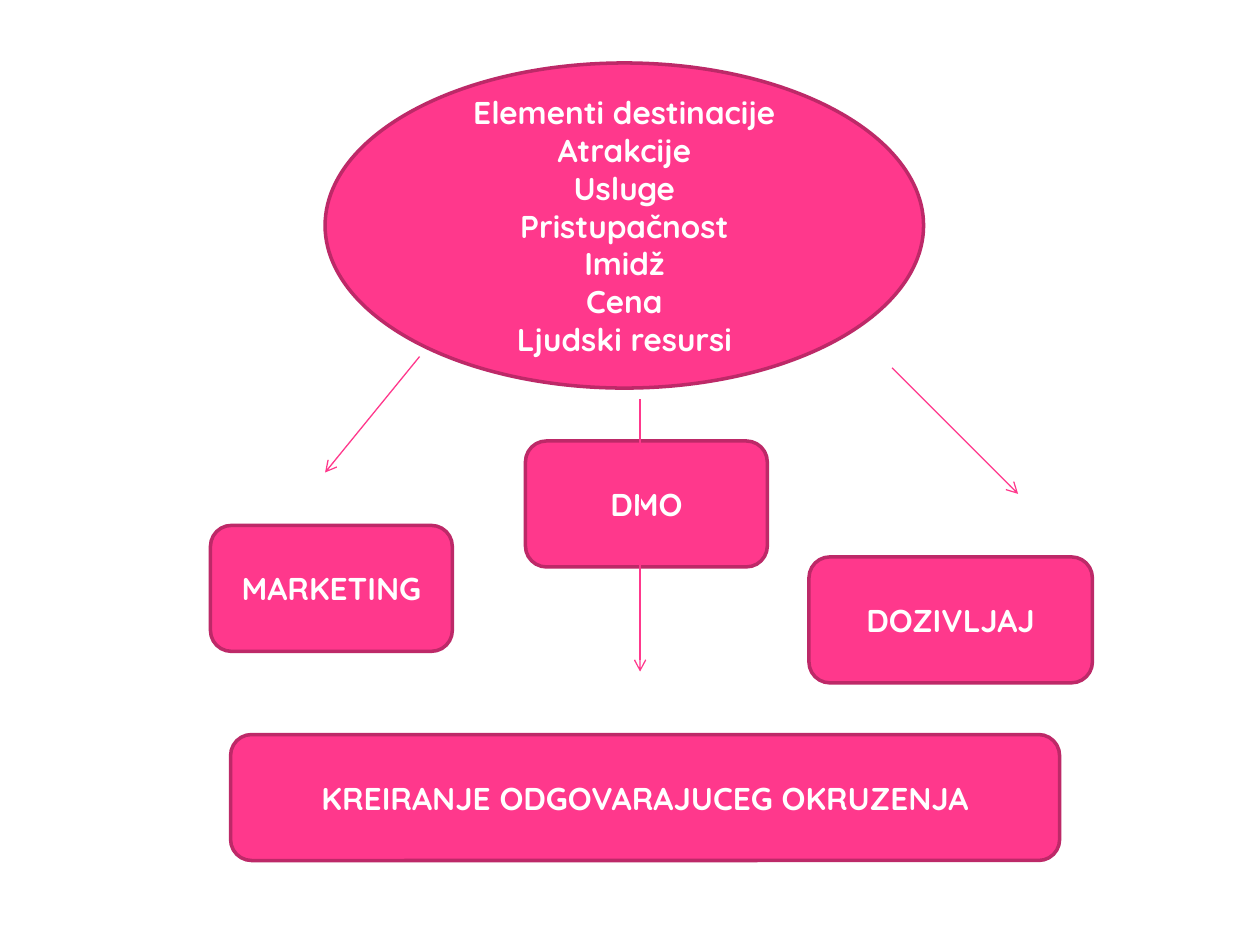
from lxml import etree
from pptx import Presentation
from pptx.dml.color import RGBColor
from pptx.enum import shapes, text
from pptx.oxml.ns import qn
from pptx.util import Inches, Pt

PINK = RGBColor(0xFF, 0x38, 0x8C)
DARK_PINK = RGBColor(0xBD, 0x29, 0x68)
WHITE = RGBColor(0xFF, 0xFF, 0xFF)

OVAL = shapes.MSO_SHAPE.OVAL
ROUNDED = shapes.MSO_SHAPE.ROUNDED_RECTANGLE

ELEMENTS = [
    "Elementi destinacije", "Atrakcije", "Usluge", "Pristupačnost",
    "Imidž", "Cena", "Ljudski resursi",
]

# outline, left, top, width, height, lines of text
NODES = [
    (OVAL, 2.58, 0.5, 4.75, 2.58, ELEMENTS),
    (ROUNDED, 4.17, 3.5, 1.92, 1, ["DMO"]),
    (ROUNDED, 1.67, 4.17, 1.92, 1, ["MARKETING"]),
    (ROUNDED, 6.42, 4.42, 2.25, 1, ["DOZIVLJAJ"]),
    (ROUNDED, 1.83, 5.83, 6.58, 1, ["KREIRANJE ODGOVARAJUCEG OKRUZENJA"]),
]

# start x, start y, end x, end y
ARROWS = [
    (7.08, 2.92, 8.08, 3.92),
    (3.33, 2.83, 2.58, 3.75),
    (5.08, 3.17, 5.08, 5.33),
]

deck = Presentation()
deck.slide_width = Inches(10)
deck.slide_height = Inches(7.5)
page = deck.slides.add_slide(deck.slide_layouts[6])

for outline, left, top, width, height, lines in NODES:
    node = page.shapes.add_shape(
        outline, Inches(left), Inches(top), Inches(width), Inches(height))
    node.shadow.inherit = False
    node.fill.solid()
    node.fill.fore_color.rgb = PINK
    node.line.color.rgb = DARK_PINK
    node.line.width = Pt(2)
    frame = node.text_frame
    frame.word_wrap = True
    frame.vertical_anchor = text.MSO_ANCHOR.MIDDLE
    frame.text = "\n".join(lines)
    for para in frame.paragraphs:
        para.alignment = text.PP_ALIGN.CENTER
        para.font.name = "Quicksand"
        para.font.size = Pt(18)
        para.font.bold = True
        para.font.color.rgb = WHITE

for ends in ARROWS:
    arrow = page.shapes.add_connector(
        shapes.MSO_CONNECTOR.STRAIGHT, *[Inches(value) for value in ends])
    arrow.line.color.rgb = PINK
    arrow.line.width = Pt(0.75)
    etree.SubElement(arrow.line._get_or_add_ln(), qn("a:tailEnd"), type="arrow")
    etree.SubElement(arrow._element.spPr, qn("a:effectLst"))

deck.save("out.pptx")
